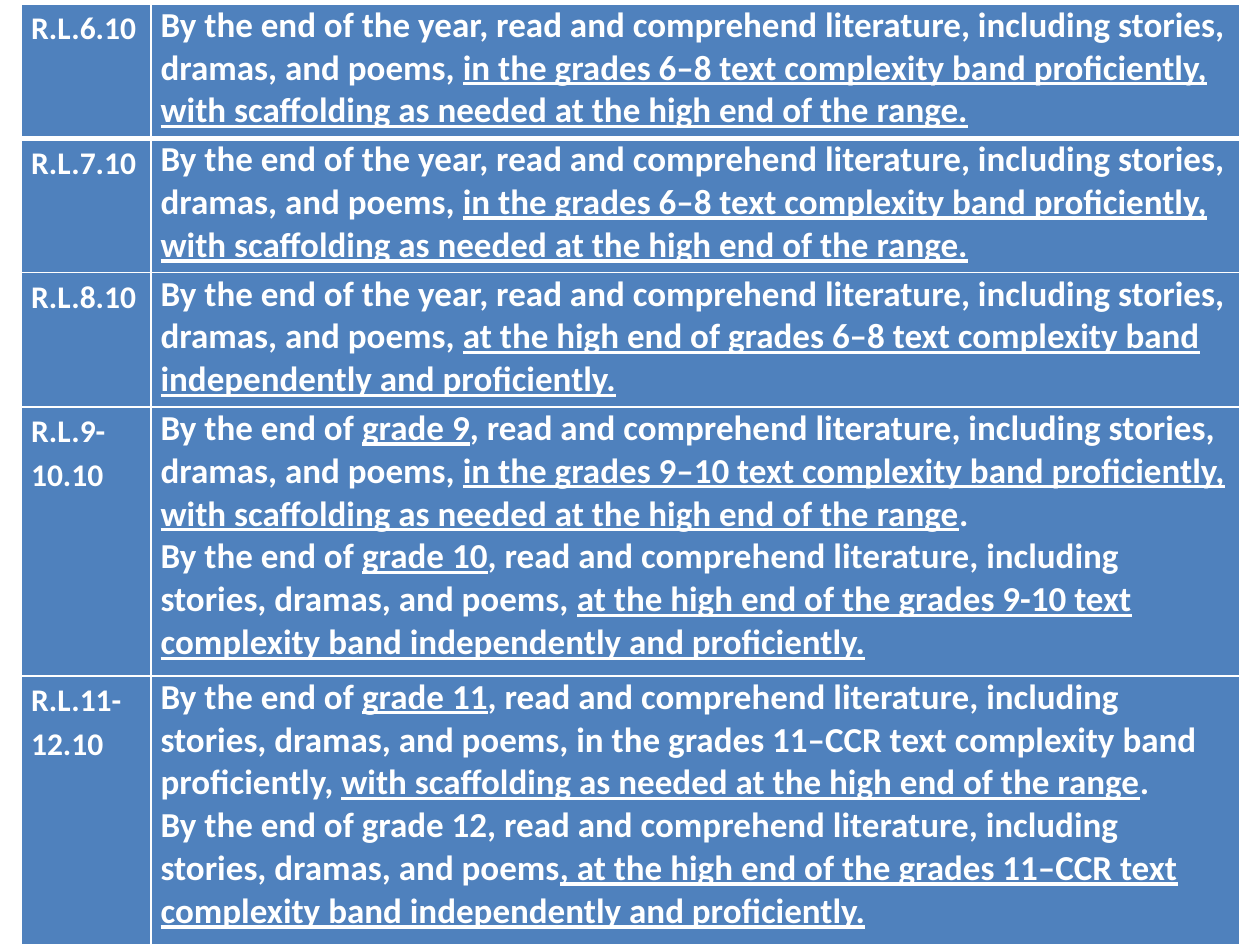
from lxml.etree import SubElement
from pptx import Presentation
from pptx.dml.color import RGBColor
from pptx.oxml.ns import qn
from pptx.util import Pt

WHITE, BLUE = "FFFFFF", "4F81BD"


def rgb(value):
    return RGBColor.from_string(value)


def fill_cell(cell, paras, size, spacing, bottom):
    """Write paragraphs; text between underscores is underlined."""
    cell.margin_left = cell.margin_right = Pt(5.4)
    cell.margin_top = cell.margin_bottom = 0
    tf = cell.text_frame
    for i, text in enumerate(paras):
        p = tf.paragraphs[0] if i == 0 else tf.add_paragraph()
        p.line_spacing = spacing
        for j, part in enumerate(text.split("_")):
            if part:
                r = p.add_run()
                r.text = part
                r.font.name, r.font.size, r.font.bold = "Calibri", Pt(size), True
                r.font.underline = j % 2 == 1
                r.font.color.rgb = rgb(WHITE)
    # Borders come before the fill in the cell properties
    tcPr = cell._tc.get_or_add_tcPr()
    for side, width in (("L", 1), ("R", 1), ("T", 1), ("B", bottom)):
        ln = SubElement(tcPr, qn(f"a:ln{side}"), w=str(Pt(width)))
        SubElement(SubElement(ln, qn("a:solidFill")), qn("a:srgbClr"), val=WHITE)
    cell.fill.solid()
    cell.fill.fore_color.rgb = rgb(BLUE)


prs = Presentation()
prs.slide_width, prs.slide_height = Pt(720), Pt(540)
s = prs.slides.add_slide(prs.slide_layouts[6])

# Standards by grade
READ = "read and comprehend literature, including stories, dramas, and poems"
YEAR = f"By the end of the year, {READ}, "
SCAFFOLD = "with scaffolding as needed at the high end of the range"
MIDDLE = f"{YEAR}_in the grades 6–8 text complexity band proficiently, {SCAFFOLD}._"
ALONE = "text complexity band independently and proficiently."
standards = [
    ("R.L.6.10", [MIDDLE]),
    ("R.L.7.10", [MIDDLE]),
    ("R.L.8.10", [f"{YEAR}_at the high end of grades 6–8 {ALONE}_"]),
    ("R.L.9-10.10", [
        f"By the end of _grade 9_, {READ}, _in the grades 9–10 text complexity "
        f"band proficiently, {SCAFFOLD}_.",
        f"By the end of _grade 10_, {READ}, _at the high end of the grades 9-10 {ALONE}_"]),
    ("R.L.11-12.10", [
        f"By the end of _grade 11_, {READ}, in the grades 11–CCR text complexity "
        f"band proficiently, _{SCAFFOLD}_.",
        f"By the end of grade 12, {READ}_, at the high end of the grades 11–CCR {ALONE}_"]),
]

# Table: rows are as tall as their number of paragraphs
ROW = 76.8
table = s.shapes.add_table(len(standards), 2, Pt(12.4), Pt(2.2), Pt(696.2), Pt(7 * ROW)).table
table.columns[0].width, table.columns[1].width = Pt(74), Pt(622.2)
for i, (code, paras) in enumerate(standards):
    table.rows[i].height = Pt(ROW * len(paras))
    bottom = 3 if i == 0 else 1
    fill_cell(table.cell(i, 0), [code], 18, 1.15, bottom)
    fill_cell(table.cell(i, 1), paras, 20, 1.0, bottom)

prs.save("out.pptx")
